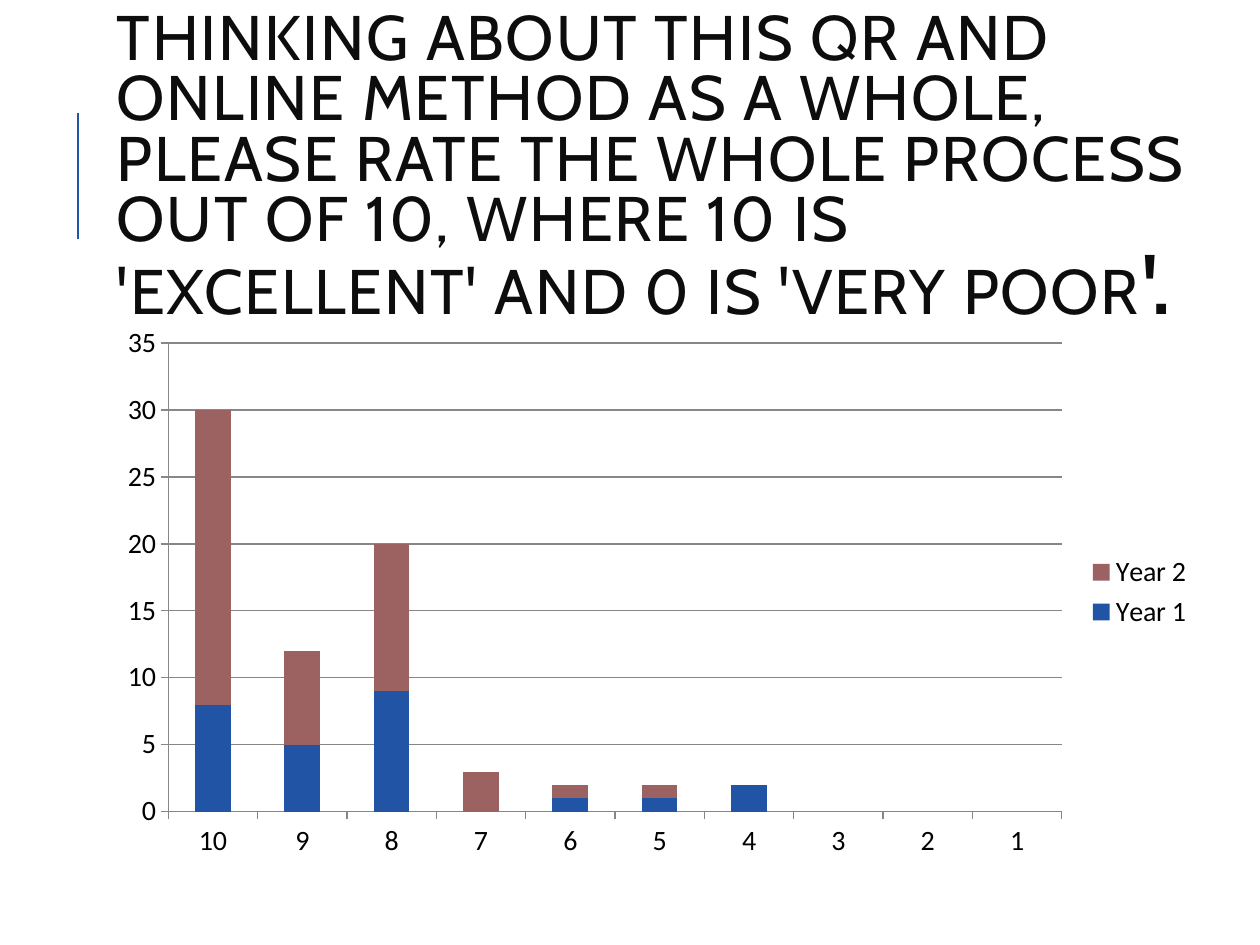
"""Build the slide with the rating question and its stacked column chart."""
import pptx
import pptx.chart.data
import pptx.dml.color
import pptx.enum.chart
import pptx.enum.shapes
import pptx.enum.text
import pptx.oxml.ns
import pptx.util
from lxml import etree

Inches, Pt = pptx.util.Inches, pptx.util.Pt
XL = pptx.enum.chart

TITLE = [
    ("THINKING ABOUT THIS QR AND ONLINE METHOD AS A WHOLE, PLEASE RATE "
     "THE WHOLE PROCESS OUT OF 10, WHERE 10 IS 'EXCELLENT' AND 0 IS 'VERY POOR",
     {"name": "Cabin", "size": Pt(36), "bold": False}),
    ("'.", {"name": "Cabin", "size": Pt(45), "bold": True}),
]
RATINGS = [str(n) for n in range(10, 0, -1)]
SERIES = [
    ("Year 1", "2254A6", [8, 5, 9, None, 1, 1, 2, None, None, None]),
    ("Year 2", "9B6261", [22, 7, 11, 3, 1, 1, None, None, None, None]),
]
ACCENT, INK, GRID = "2254A6", "0D0D0D", "878787"
TITLE_BOX = (0.83, 0.36, 8.96, 1.99)
CHART_BOX = (0.84, 2.5, 8.73, 4.4)
RULE = (0.62, 1.9, 0.62, 0.9)


def rgb(value):
    return pptx.dml.color.RGBColor.from_string(value)


def assign(obj, values):
    for key, value in values.items():
        setattr(obj, key, value)


def inches(values):
    return [Inches(v) for v in values]


def style_line(line, color, width):
    line.color.rgb = rgb(color)
    line.width = Pt(width)


def add_rule(s):
    sp = s.shapes.add_connector(
        pptx.enum.shapes.MSO_CONNECTOR.STRAIGHT, *inches(RULE))
    style_line(sp.line, ACCENT, 1.5)
    etree.SubElement(sp._element.spPr, pptx.oxml.ns.qn("a:effectLst"))


def add_title(s):
    tf = s.shapes.add_textbox(*inches(TITLE_BOX)).text_frame
    assign(tf, {"word_wrap": True,
                "vertical_anchor": pptx.enum.text.MSO_ANCHOR.MIDDLE})
    p = tf.paragraphs[0]
    p.line_spacing = 0.8
    for text, font in TITLE:
        r = p.add_run()
        r.text = text
        assign(r.font, font)
        r.font.color.rgb = rgb(INK)
        r._r.get_or_add_rPr().set("spc", "100")


def add_rating_chart(s):
    data = pptx.chart.data.CategoryChartData()
    data.categories = RATINGS
    for name, _, values in SERIES:
        data.add_series(name, values)
    chart = s.shapes.add_chart(
        XL.XL_CHART_TYPE.COLUMN_STACKED, *inches(CHART_BOX), data).chart
    assign(chart, {"has_title": False, "has_legend": True})
    assign(chart.font, {"name": "Calibri", "size": Pt(16)})
    chart.font.color.rgb = rgb("000000")
    assign(chart.legend, {"position": XL.XL_LEGEND_POSITION.RIGHT,
                          "include_in_layout": False})
    plot = chart.plots[0]
    assign(plot, {"gap_width": 150, "overlap": 100, "vary_by_categories": False})
    for series, (_, color, _) in zip(plot.series, SERIES):
        series.format.fill.solid()
        series.format.fill.fore_color.rgb = rgb(color)
    for axis in (chart.category_axis, chart.value_axis):
        axis.major_tick_mark = XL.XL_TICK_MARK.OUTSIDE
        style_line(axis.format.line, GRID, 0.75)
    assign(chart.value_axis, {"minimum_scale": 0, "maximum_scale": 35,
                              "major_unit": 5, "has_major_gridlines": True})
    style_line(chart.value_axis.major_gridlines.format.line, GRID, 0.75)


def main():
    prs = pptx.Presentation()
    assign(prs, {"slide_width": Inches(10), "slide_height": Inches(7.5)})
    s = prs.slides.add_slide(prs.slide_layouts[6])
    add_rule(s)
    add_title(s)
    add_rating_chart(s)
    prs.save("out.pptx")


if __name__ == "__main__":
    main()
